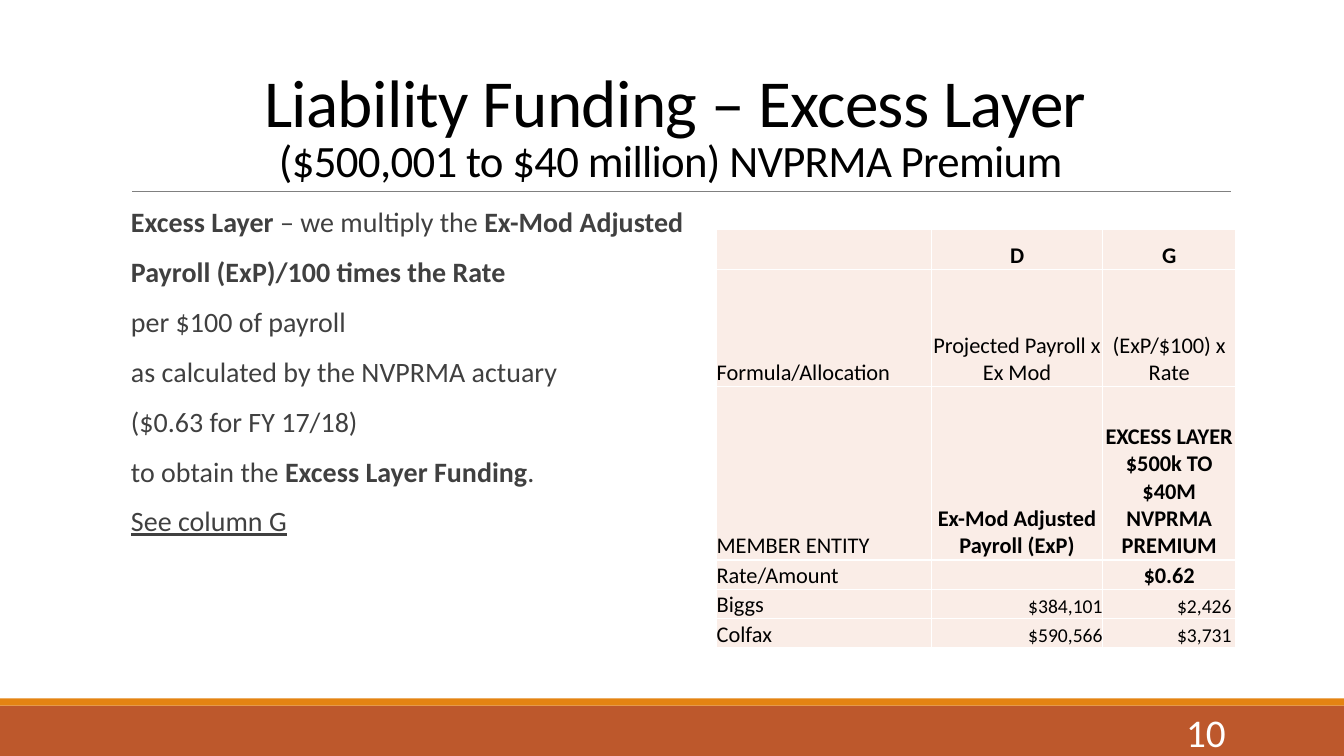
from typing import NamedTuple

from lxml.etree import SubElement
from pptx import Presentation
from pptx.dml.color import RGBColor
from pptx.enum.shapes import MSO_CONNECTOR, MSO_SHAPE
from pptx.enum.text import MSO_ANCHOR, MSO_AUTO_SIZE, PP_ALIGN
from pptx.oxml.ns import qn
from pptx.util import Cm, Pt

COLOURS = {
    "rust": "BD582C", "orange": "E48312", "rule": "808080", "title": "000000",
    "body": "404040", "cell": "FAEDE7", "white": "FFFFFF",
}
FONT = "Calibri"


class Band(NamedTuple):
    top: float
    height: float
    colour: str


class Piece(NamedTuple):
    text: str
    bold: bool = False
    underline: bool = False


class Entry(NamedTuple):
    text: str = ""
    bold: bool = False
    align: PP_ALIGN = PP_ALIGN.CENTER
    size: int = 16
    right_margin: float = 0


def label(text: str) -> Entry:
    return Entry(text, align=PP_ALIGN.LEFT)


def amount(text: str, right_margin: float = 0) -> Entry:
    return Entry(text, align=PP_ALIGN.RIGHT, size=14, right_margin=right_margin)


BANDS = [Band(17.78, 1.27, "rust"), Band(17.6, 0.18, "orange")]

EXPLANATION = [
    [Piece("Excess Layer ", bold=True), Piece("– we multiply the "),
     Piece("Ex-Mod Adjusted", bold=True)],
    [Piece("Payroll (ExP)/100 times the Rate", bold=True)],
    [Piece("per $100 of payroll")],
    [Piece("as calculated by the NVPRMA actuary")],
    [Piece("($0.63 for FY 17/18)")],
    [Piece("to obtain the "), Piece("Excess Layer Funding", bold=True), Piece(".")],
    [Piece("See column G", underline=True)],
]

COLUMN_WIDTHS = [5.41, 4.32, 3.35]
ROW_HEIGHTS = [1.02, 2.95, 4.37, 0.74, 0.74, 0.74]
FUNDING = [
    [Entry(), Entry("D", bold=True), Entry("G", bold=True)],
    [label("Formula/Allocation"), Entry("Projected Payroll x Ex Mod"),
     Entry("(ExP/$100) x Rate")],
    [label("MEMBER ENTITY"), Entry("Ex-Mod Adjusted Payroll (ExP)", bold=True),
     Entry("EXCESS LAYER\v$500k TO\v$40M\vNVPRMA\vPREMIUM", bold=True)],
    [label("Rate/Amount"), Entry(), Entry("$0.62", bold=True)],
    [label("Biggs"), amount("$384,101"), amount("$2,426", 0.1)],
    [label("Colfax"), amount("$590,566"), amount("$3,731", 0.1)],
]


def rgb(name: str) -> RGBColor:
    return RGBColor.from_string(COLOURS[name])


def style(run, size: float, colour: str, bold: bool = False) -> None:
    run.font.name = FONT
    run.font.size = Pt(size)
    run.font.bold = bold
    run.font.color.rgb = rgb(colour)


def place(shape, left: float, top: float, width: float, height: float) -> None:
    shape.left, shape.top = Cm(left), Cm(top)
    shape.width, shape.height = Cm(width), Cm(height)


def draw_band(slide, band: Band) -> None:
    bar = slide.shapes.add_shape(
        MSO_SHAPE.RECTANGLE, 0, Cm(band.top), Cm(33.87), Cm(band.height))
    bar.shadow.inherit = False
    bar.fill.solid()
    bar.fill.fore_color.rgb = rgb(band.colour)
    bar.line.fill.background()


def draw_title_rule(slide) -> None:
    rule = slide.shapes.add_connector(
        MSO_CONNECTOR.STRAIGHT, Cm(3.33), Cm(4.83), Cm(31.01), Cm(4.83))
    rule.line.color.rgb = rgb("rule")
    rule.line.width = Pt(0.5)
    SubElement(rule._element.spPr, qn("a:effectLst"))


def write_title(title) -> None:
    place(title, 3.05, 0.79, 27.94, 4.04)
    frame = title.text_frame
    frame.text = "Liability Funding – Excess Layer\v($500,001 to $40 million) NVPRMA Premium "
    frame.auto_size = MSO_AUTO_SIZE.NONE
    frame.vertical_anchor = MSO_ANCHOR.BOTTOM
    heading = frame.paragraphs[0]
    heading.alignment = PP_ALIGN.CENTER
    heading.line_spacing = 0.85
    for run, size in zip(heading.runs, (48, 32)):
        style(run, size, "title")
        run._r.get_or_add_rPr().set("spc", "-50")


def set_blank_bullet(paragraph) -> None:
    """Give the paragraph a hanging indent with a space as its bullet."""
    properties = paragraph._p.get_or_add_pPr()
    properties.set("marL", str(Cm(0.25)))
    properties.set("indent", str(-Cm(0.25)))
    colour = SubElement(properties, qn("a:buClr"))
    SubElement(colour, qn("a:srgbClr"), val=COLOURS["orange"])
    SubElement(properties, qn("a:buChar"), char=" ")


def write_explanation(body) -> None:
    place(body, 3.05, 5.13, 27.94, 11.18)
    frame = body.text_frame
    frame.margin_left = frame.margin_right = 0
    frame.auto_size = MSO_AUTO_SIZE.NONE
    frame.vertical_anchor = MSO_ANCHOR.TOP
    for index, pieces in enumerate(EXPLANATION):
        paragraph = frame.add_paragraph() if index else frame.paragraphs[0]
        paragraph.line_spacing = 0.9
        paragraph.space_before, paragraph.space_after = Pt(12), Pt(2)
        set_blank_bullet(paragraph)
        for piece in pieces:
            run = paragraph.add_run()
            run.text = piece.text
            style(run, 20, "body", piece.bold)
            run.font.underline = piece.underline


def add_borders(cell) -> None:
    properties = cell._tc.get_or_add_tcPr()
    for side in ("lnL", "lnR", "lnT", "lnB"):
        border = SubElement(properties, qn(f"a:{side}"), w=str(Pt(1)))
        fill = SubElement(border, qn("a:solidFill"))
        SubElement(fill, qn("a:srgbClr"), val=COLOURS["white"])


def fill_cell(cell, entry: Entry) -> None:
    add_borders(cell)
    cell.fill.solid()
    cell.fill.fore_color.rgb = rgb("cell")
    cell.margin_left = cell.margin_top = cell.margin_bottom = 0
    cell.margin_right = Cm(entry.right_margin)
    cell.vertical_anchor = MSO_ANCHOR.BOTTOM
    cell.text_frame.text = entry.text
    paragraph = cell.text_frame.paragraphs[0]
    paragraph.alignment = entry.align
    for run in paragraph.runs:
        style(run, entry.size, "title", entry.bold)
    if not entry.text:
        SubElement(paragraph._p, qn("a:endParaRPr"), sz=str(entry.size * 100))


def draw_funding_table(slide) -> None:
    table = slide.shapes.add_table(
        len(ROW_HEIGHTS), len(COLUMN_WIDTHS), Cm(18.06), Cm(5.77),
        Cm(sum(COLUMN_WIDTHS)), Cm(sum(ROW_HEIGHTS))).table
    table.first_row = table.horz_banding = False
    for column, width in zip(table.columns, COLUMN_WIDTHS):
        column.width = Cm(width)
    for row, height, entries in zip(table.rows, ROW_HEIGHTS, FUNDING):
        row.height = Cm(height)
        for cell, entry in zip(row.cells, entries):
            fill_cell(cell, entry)


def write_page_number(slide) -> None:
    frame = slide.shapes.add_textbox(Cm(27.51), Cm(17.93), Cm(3.63), Cm(1.02)).text_frame
    frame.word_wrap = True
    frame.vertical_anchor = MSO_ANCHOR.MIDDLE
    frame.text = "10"
    frame.paragraphs[0].alignment = PP_ALIGN.RIGHT
    style(frame.paragraphs[0].runs[0], 28, "white")


def main() -> None:
    presentation = Presentation()
    presentation.slide_width, presentation.slide_height = Cm(33.87), Cm(19.05)
    slide = presentation.slides.add_slide(presentation.slide_layouts[1])
    for band in BANDS:
        draw_band(slide, band)
    draw_title_rule(slide)
    write_title(slide.shapes.title)
    write_explanation(slide.placeholders[1])
    draw_funding_table(slide)
    write_page_number(slide)
    presentation.save("out.pptx")


if __name__ == "__main__":
    main()
